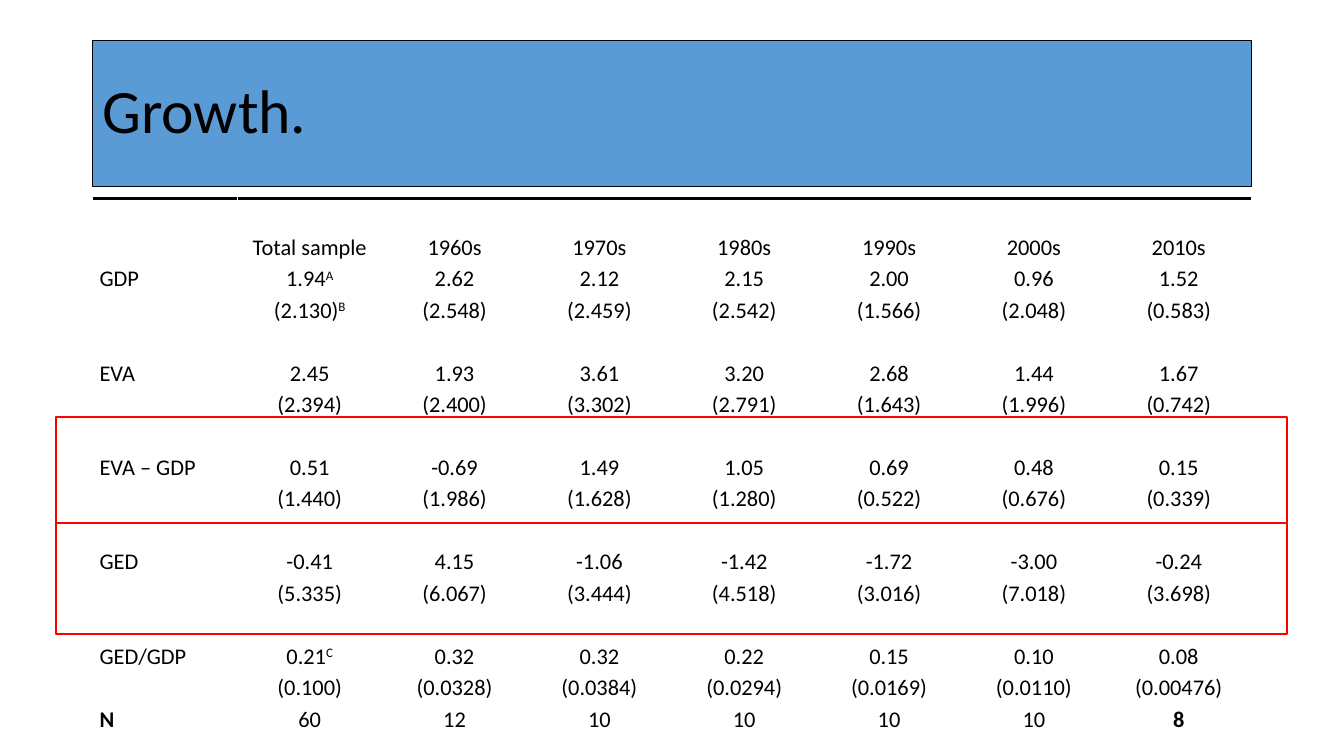
from dataclasses import dataclass

from lxml import etree
from pptx import Presentation
from pptx.dml.color import RGBColor
from pptx.enum.shapes import MSO_SHAPE
from pptx.enum.text import MSO_ANCHOR, PP_ALIGN
from pptx.oxml.ns import qn
from pptx.util import Cm, Pt

RECT = MSO_SHAPE.RECTANGLE
LEFT, CENTER = PP_ALIGN.LEFT, PP_ALIGN.CENTER
MIDDLE = MSO_ANCHOR.MIDDLE


@dataclass(frozen=True)
class Theme:
    font: str = "Calibri"
    ink: str = "000000"
    paper: str = "FFFFFF"
    band: str = "5B9BD5"
    mark: str = "FF0000"
    head: float = 44
    body: float = 16


THEME = Theme()

# One entry per table row: label, then values; "^" starts a superscript.
ROWS = [
    ("", ""),
    ("", "Total sample|1960s|1970s|1980s|1990s|2000s|2010s"),
    ("GDP", "1.94^A|2.62|2.12|2.15|2.00|0.96|1.52"),
    ("", "(2.130)^B|(2.548)|(2.459)|(2.542)|(1.566)|(2.048)|(0.583)"),
    ("", ""),
    ("EVA", "2.45|1.93|3.61|3.20|2.68|1.44|1.67"),
    ("", "(2.394)|(2.400)|(3.302)|(2.791)|(1.643)|(1.996)|(0.742)"),
    ("", ""),
    ("EVA – GDP", "0.51|-0.69|1.49|1.05|0.69|0.48|0.15"),
    ("", "(1.440)|(1.986)|(1.628)|(1.280)|(0.522)|(0.676)|(0.339)"),
    ("", ""),
    ("GED", "-0.41|4.15|-1.06|-1.42|-1.72|-3.00|-0.24"),
    ("", "(5.335)|(6.067)|(3.444)|(4.518)|(3.016)|(7.018)|(3.698)"),
    ("", ""),
    ("GED/GDP", "0.21^C|0.32|0.32|0.22|0.15|0.10|0.08"),
    ("", "(0.100)|(0.0328)|(0.0384)|(0.0294)|(0.0169)|(0.0110)|(0.00476)"),
    ("N", "60|12|10|10|10|10|8"),
]
COLS = 8
BOLD = {"N", "8"}


def color(code):
    return RGBColor.from_string(code)


def write(frame, text, size=THEME.body, bold=False, align=LEFT, space=1.15):
    para = frame.paragraphs[0]
    para.alignment, para.line_spacing = align, space
    para.font.size = Pt(size)
    for i, part in enumerate(text.split("^") if text else []):
        run = para.add_run()
        run.text = part
        font = run.font
        font.name, font.size, font.bold = THEME.font, Pt(size), bold
        font.color.rgb = color(THEME.ink)
        if i:
            run._r.get_or_add_rPr().set("baseline", "30000")
    if not text:
        # An empty cell keeps the row height of its neighbours.
        end = etree.SubElement(para._p, qn("a:endParaRPr"))
        end.set("sz", str(int(size * 100)))


def box(slide, area, line, width, fill=None):
    shape = slide.shapes.add_shape(RECT, *map(Cm, area))
    shape.shadow.inherit = False
    if fill:
        shape.fill.solid()
        shape.fill.fore_color.rgb = color(fill)
    else:
        shape.fill.background()
    shape.line.color.rgb = color(line)
    shape.line.width = Pt(width)
    return shape


def title(slide, area, text):
    frame = box(slide, area, THEME.ink, 0.75, THEME.band).text_frame
    frame.word_wrap = True
    frame.vertical_anchor = MIDDLE
    write(frame, text, size=THEME.head, space=0.9)


def rule(cell, side):
    """Draw a border on one side of a cell: lnT or lnB."""
    props = cell._tc.get_or_add_tcPr()
    line = etree.Element(qn("a:" + side), w=str(Pt(2)))
    fill = etree.SubElement(line, qn("a:solidFill"))
    etree.SubElement(fill, qn("a:srgbClr"), val=THEME.ink)
    props.insert(0, line)


def stats(slide, area, step):
    """Place the table of means; every row but the last is one step high."""
    last = len(ROWS) - 1
    grid = slide.shapes.add_table(len(ROWS), COLS, *map(Cm, area)).table
    grid.first_row = grid.horz_banding = False
    for col in grid.columns:
        col.width = Cm(area[2] / COLS)
    for r, (label, vals) in enumerate(ROWS):
        grid.rows[r].height = Cm(step if r < last else area[3] - step * last)
        texts = [label] + (vals.split("|") if vals else [""] * (COLS - 1))
        for c, text in enumerate(texts):
            cell = grid.cell(r, c)
            cell.margin_left = cell.margin_right = Cm(0.18)
            cell.margin_top = cell.margin_bottom = 0
            cell.fill.solid()
            cell.fill.fore_color.rgb = color(THEME.paper)
            write(cell.text_frame, text, bold=text in BOLD,
                  align=CENTER if c else LEFT)
            if r == 0:
                rule(cell, "lnT")
            elif r == last:
                rule(cell, "lnB")
    grid.cell(0, 1).merge(grid.cell(0, COLS - 1))


def marks(slide, area, split):
    """Frame two groups of rows, which meet at split below the top."""
    left, top, width, height = area
    box(slide, (left, top + split, width, height - split), THEME.mark, 1.5)
    box(slide, (left, top, width, split), THEME.mark, 1.5)


def main():
    deck = Presentation()
    deck.slide_width, deck.slide_height = Cm(33.87), Cm(19.05)
    slide = deck.slides.add_slide(deck.slide_layouts[6])
    title(slide, (2.33, 1.01, 29.2, 3.68), "Growth.")
    stats(slide, (2.33, 5, 29.2, 14.13), step=0.79)
    marks(slide, (1.42, 10.51, 31.01, 5.47), split=2.67)
    deck.save("out.pptx")


if __name__ == "__main__":
    main()
